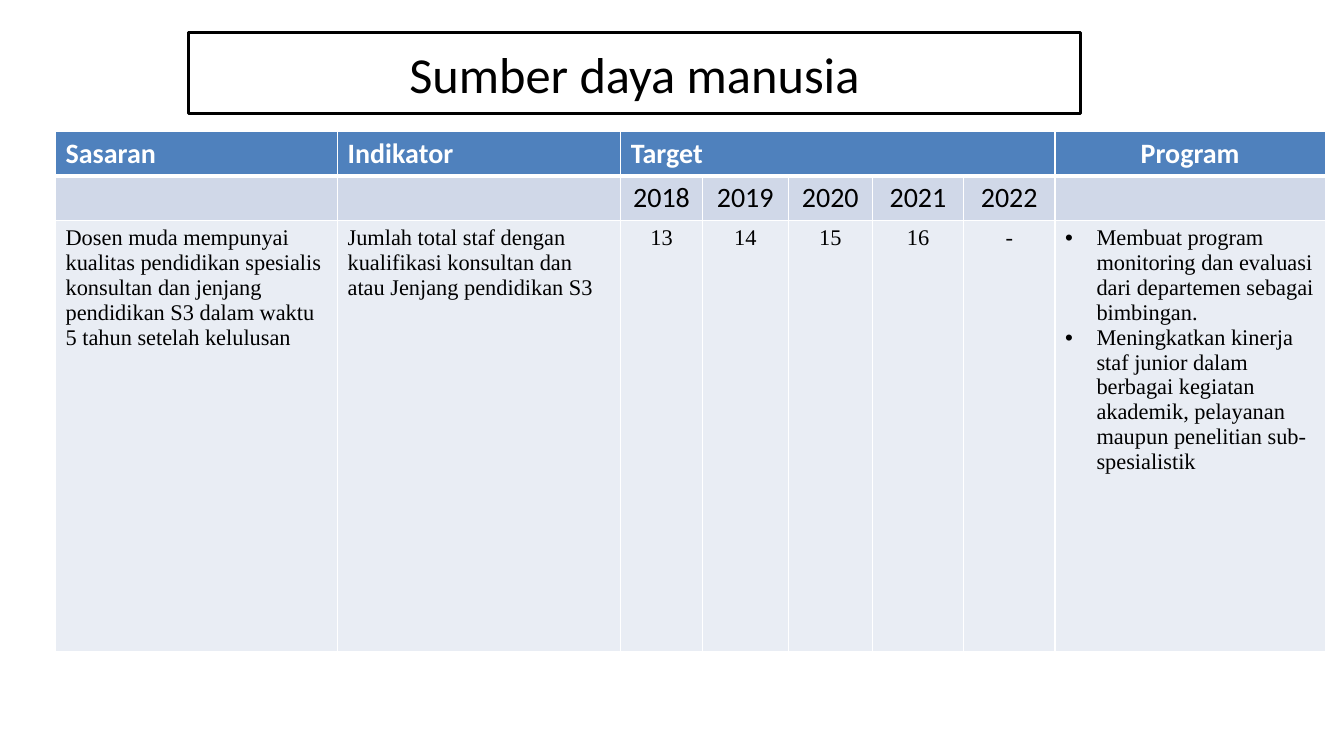
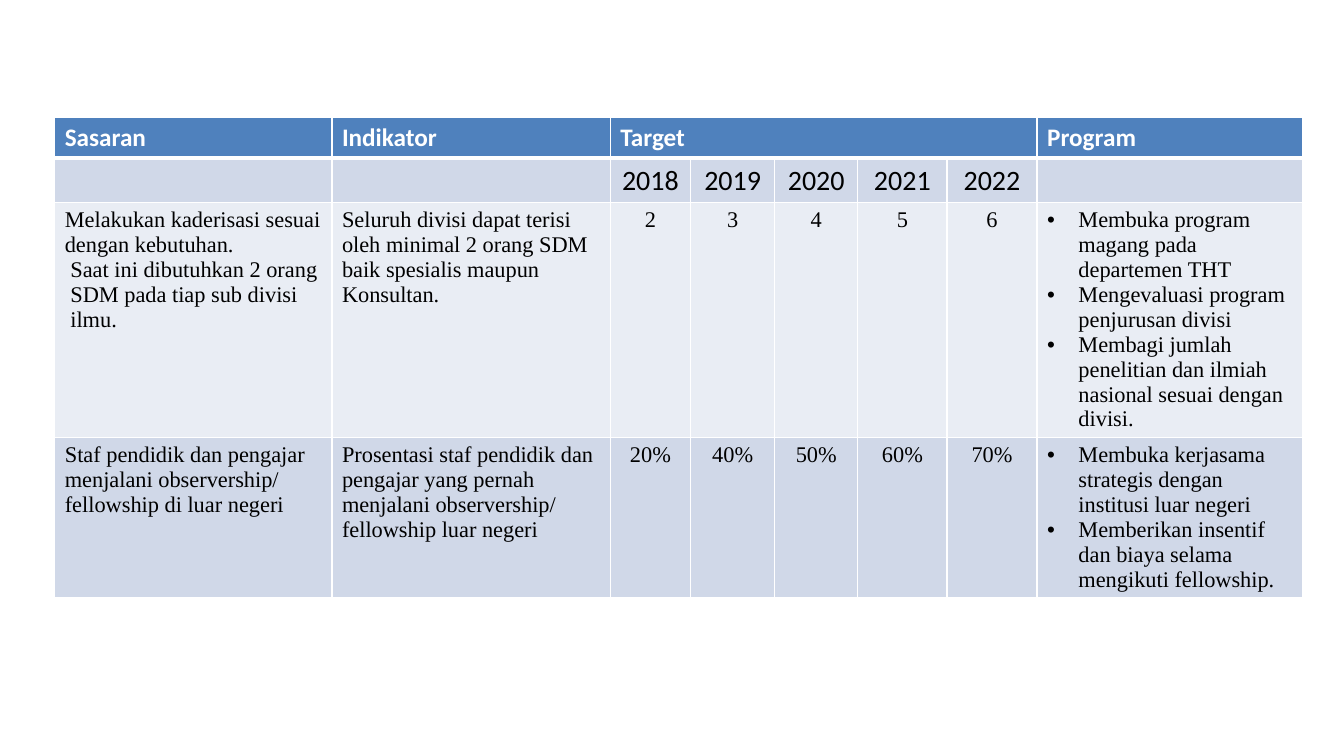
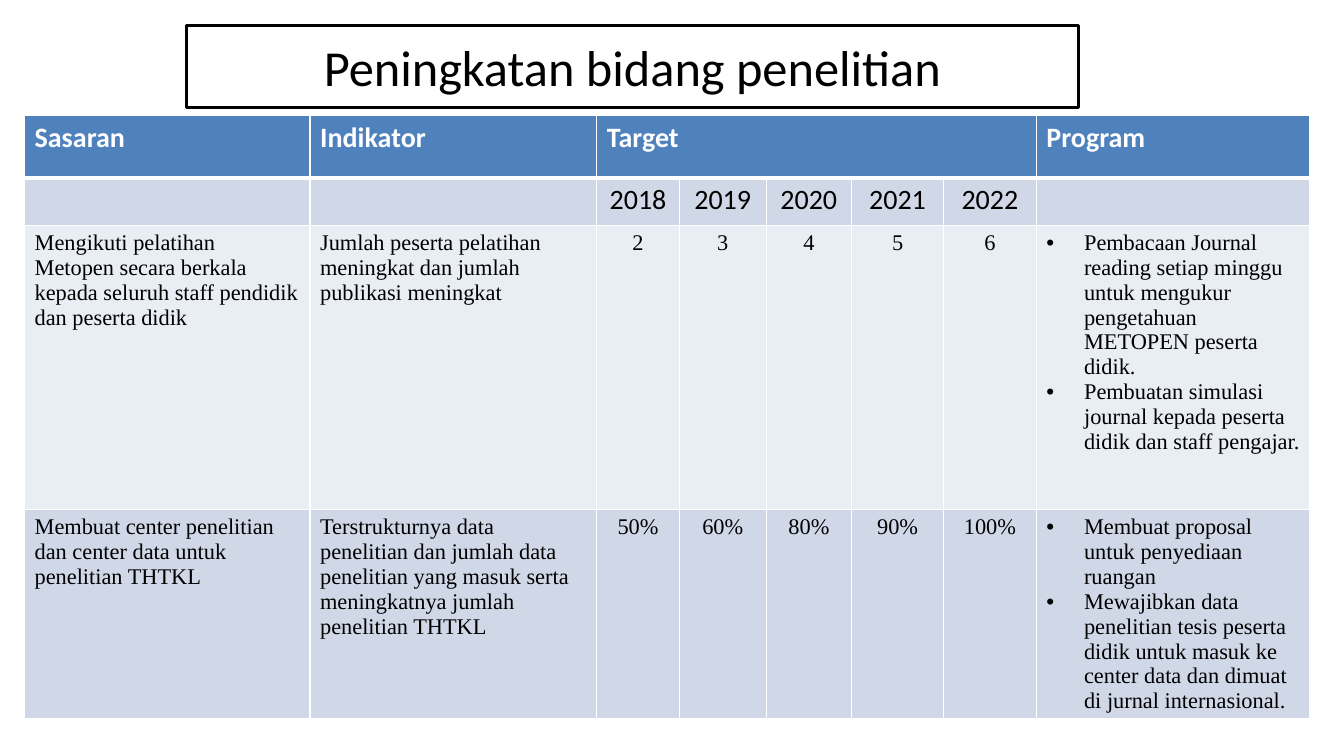
from dataclasses import dataclass

from lxml import etree
from pptx import Presentation
from pptx import util as u
from pptx.dml.color import RGBColor
from pptx.enum import text
from pptx.oxml import ns

BLACK = RGBColor(0x00, 0x00, 0x00)
WHITE = RGBColor(0xFF, 0xFF, 0xFF)
HEADER_BLUE = RGBColor(0x4F, 0x81, 0xBD)
BAND_DARK = RGBColor(0xD0, 0xD8, 0xE8)
BAND_LIGHT = RGBColor(0xE9, 0xED, 0xF4)

HEADING_FONT = "Calibri"
BODY_FONT = "Times New Roman"
LEFT, CENTER = text.PP_ALIGN.LEFT, text.PP_ALIGN.CENTER

TITLE_ONLY, BLANK = 5, 6
YEARS = ("2018", "2019", "2020", "2021", "2022")
COLUMN_SHARES = (7.11, 7.14, 2.06, 2.16, 2.13, 2.29, 2.31, 6.81)
FIRST_YEAR, LAST_YEAR, PROGRAM = 2, 6, 7


@dataclass(frozen=True)
class Line:
    words: str
    indent: float = 0
    bullet: bool = False


@dataclass(frozen=True)
class Style:
    font: str
    size: int
    color: RGBColor = BLACK
    bold: bool = False
    align: text.PP_ALIGN = LEFT


@dataclass(frozen=True)
class Goal:
    aim: tuple[Line, ...]
    indicator: str
    targets: tuple[str, ...]
    programs: tuple[str, ...]


@dataclass(frozen=True)
class Title:
    words: str
    left: float
    top: float


@dataclass(frozen=True)
class PlanPage:
    """One slide; all lengths are in centimetres."""
    left: float
    top: float
    width: float
    row_heights: tuple[float, ...]
    goals: tuple[Goal, ...]
    title: Title | None = None
    header_size: int = 20
    program_align: text.PP_ALIGN = LEFT
    bullet_indent: float = 0.79


YEAR_STYLE = Style(HEADING_FONT, 20, align=CENTER)
BODY_STYLE = Style(BODY_FONT, 16)
TARGET_STYLE = Style(BODY_FONT, 16, align=CENTER)
TITLE_STYLE = Style(HEADING_FONT, 36, align=CENTER)

PAGES = (
    PlanPage(
        1.4, 3.32, 32, (1.11, 1.12, 10.85),
        (
            Goal(
                (Line("Dosen muda mempunyai kualitas pendidikan spesialis konsultan dan "
                      "jenjang pendidikan S3 dalam waktu 5 tahun setelah kelulusan"),),
                "Jumlah total staf dengan kualifikasi konsultan dan atau Jenjang pendidikan S3",
                ("13", "14", "15", "16", "-"),
                ("Membuat program monitoring dan evaluasi dari departemen sebagai bimbingan.",
                 "Meningkatkan kinerja staf junior dalam berbagai kegiatan akademik, "
                 "pelayanan maupun penelitian sub-spesialistik"),
            ),
        ),
        title=Title("Sumber daya manusia", 4.75, 0.81),
        program_align=CENTER,
    ),
    PlanPage(
        1.38, 2.96, 31.45, (1.03, 1.12, 5.92, 4.02),
        (
            Goal(
                (Line("Melakukan kaderisasi sesuai dengan kebutuhan."),
                 Line("Saat ini dibutuhkan 2 orang", 0.14),
                 Line("SDM pada tiap sub divisi", 0.14),
                 Line("ilmu.", 0.14)),
                "Seluruh divisi dapat terisi oleh minimal 2 orang SDM baik spesialis "
                "maupun Konsultan.",
                ("2", "3", "4", "5", "6"),
                ("Membuka program magang pada departemen THT",
                 "Mengevaluasi program penjurusan divisi",
                 "Membagi jumlah penelitian dan ilmiah nasional sesuai dengan divisi."),
            ),
            Goal(
                (Line("Staf pendidik dan pengajar menjalani observership/ fellowship "
                      "di luar negeri"),),
                "Prosentasi staf pendidik dan pengajar yang pernah menjalani observership/ "
                "fellowship luar negeri",
                ("20%", "40%", "50%", "60%", "70%"),
                ("Membuka kerjasama strategis dengan institusi luar negeri",
                 "Memberikan insentif dan biaya selama mengikuti fellowship."),
            ),
        ),
        header_size=18,
    ),
    PlanPage(
        0.62, 2.92, 32.39, (1.57, 1.19, 7.16, 5.28),
        (
            Goal(
                (Line("Mengikuti pelatihan Metopen secara berkala kepada seluruh staff "
                      "pendidik dan peserta didik"),),
                "Jumlah peserta pelatihan meningkat dan jumlah publikasi meningkat",
                ("2", "3", "4", "5", "6"),
                ("Pembacaan Journal reading setiap minggu untuk mengukur pengetahuan "
                 "METOPEN peserta didik.",
                 "Pembuatan simulasi journal kepada peserta didik dan staff pengajar."),
            ),
            Goal(
                (Line("Membuat center penelitian dan center data untuk penelitian THTKL"),),
                "Terstrukturnya data penelitian dan jumlah data penelitian yang masuk "
                "serta meningkatnya jumlah penelitian THTKL",
                ("50%", "60%", "80%", "90%", "100%"),
                ("Membuat proposal untuk penyediaan ruangan",
                 "Mewajibkan data penelitian tesis peserta didik untuk masuk ke center "
                 "data dan dimuat di jurnal internasional."),
            ),
        ),
        title=Title("Peningkatan bidang penelitian", 4.7, 0.64),
        bullet_indent=0.95,
    ),
)


def write_lines(frame, lines: tuple[Line, ...], style: Style) -> None:
    for index, line in enumerate(lines):
        para = frame.add_paragraph() if index else frame.paragraphs[0]
        para.text = line.words
        para.alignment = style.align
        if line.indent:
            props = para._p.get_or_add_pPr()
            props.set("marL", str(u.Cm(line.indent)))
            if line.bullet:
                props.set("indent", str(-u.Cm(line.indent)))
                etree.SubElement(props, ns.qn("a:buFont"), typeface="Arial")
                etree.SubElement(props, ns.qn("a:buChar"), char="•")
        para.font.name = style.font
        para.font.size = u.Pt(style.size)
        para.font.bold = style.bold
        para.font.color.rgb = style.color


def add_borders(cell, bottom: int) -> None:
    """Draw white cell edges, 1 pt wide apart from the bottom one."""
    props = cell._tc.get_or_add_tcPr()
    for edge, points in (("lnL", 1), ("lnR", 1), ("lnT", 1), ("lnB", bottom)):
        line = etree.SubElement(props, ns.qn(f"a:{edge}"), w=str(u.Pt(points)))
        fill = etree.SubElement(line, ns.qn("a:solidFill"))
        etree.SubElement(fill, ns.qn("a:srgbClr"), val=str(WHITE))


def fill_cell(cell, lines: tuple[Line, ...], style: Style) -> None:
    if lines:
        write_lines(cell.text_frame, lines, style)


def add_title(slide, title: Title) -> None:
    box = slide.shapes.title
    box.left, box.top = u.Cm(title.left), u.Cm(title.top)
    box.width, box.height = u.Cm(22.48), u.Cm(2.06)
    outline = etree.SubElement(box._element.spPr, ns.qn("a:prstGeom"), prst="roundRect")
    etree.SubElement(outline, ns.qn("a:avLst"))
    box.fill.solid()
    box.fill.fore_color.rgb = WHITE
    box.line.color.rgb = BLACK
    box.line.width = u.Pt(2)
    frame = box.text_frame
    frame.word_wrap = True
    frame.auto_size = text.MSO_AUTO_SIZE.NONE
    frame.vertical_anchor = text.MSO_ANCHOR.MIDDLE
    write_lines(frame, (Line(title.words),), TITLE_STYLE)


def add_plan_table(slide, plan: PlanPage) -> None:
    table = slide.shapes.add_table(
        len(plan.row_heights), len(COLUMN_SHARES),
        u.Cm(plan.left), u.Cm(plan.top), u.Cm(plan.width), u.Cm(sum(plan.row_heights)),
    ).table
    scale = plan.width / sum(COLUMN_SHARES)
    for column, share in zip(table.columns, COLUMN_SHARES):
        column.width = u.Cm(share * scale)
    for index, height in enumerate(plan.row_heights):
        table.rows[index].height = u.Cm(height)
        band = HEADER_BLUE if index == 0 else BAND_DARK if index % 2 else BAND_LIGHT
        for cell in table.rows[index].cells:
            add_borders(cell, bottom=1 if index else 3)
            cell.fill.solid()
            cell.fill.fore_color.rgb = band

    table.cell(0, FIRST_YEAR).merge(table.cell(0, LAST_YEAR))
    for column, heading in ((0, "Sasaran"), (1, "Indikator"),
                            (FIRST_YEAR, "Target"), (PROGRAM, "Program")):
        align = plan.program_align if column == PROGRAM else LEFT
        style = Style(HEADING_FONT, plan.header_size, WHITE, True, align)
        fill_cell(table.cell(0, column), (Line(heading),), style)
    for column, year in enumerate(YEARS, FIRST_YEAR):
        fill_cell(table.cell(1, column), (Line(year),), YEAR_STYLE)
    for row, goal in enumerate(plan.goals, 2):
        fill_cell(table.cell(row, 0), goal.aim, BODY_STYLE)
        fill_cell(table.cell(row, 1), (Line(goal.indicator),), BODY_STYLE)
        for column, target in enumerate(goal.targets, FIRST_YEAR):
            fill_cell(table.cell(row, column), (Line(target),), TARGET_STYLE)
        programs = tuple(Line(item, plan.bullet_indent, True) for item in goal.programs)
        fill_cell(table.cell(row, PROGRAM), programs, BODY_STYLE)


def main() -> None:
    deck = Presentation()
    deck.slide_width, deck.slide_height = u.Cm(33.87), u.Cm(19.05)
    for plan in PAGES:
        layout = deck.slide_layouts[TITLE_ONLY if plan.title else BLANK]
        slide = deck.slides.add_slide(layout)
        if plan.title:
            add_title(slide, plan.title)
        add_plan_table(slide, plan)
    deck.save("out.pptx")


if __name__ == "__main__":
    main()
